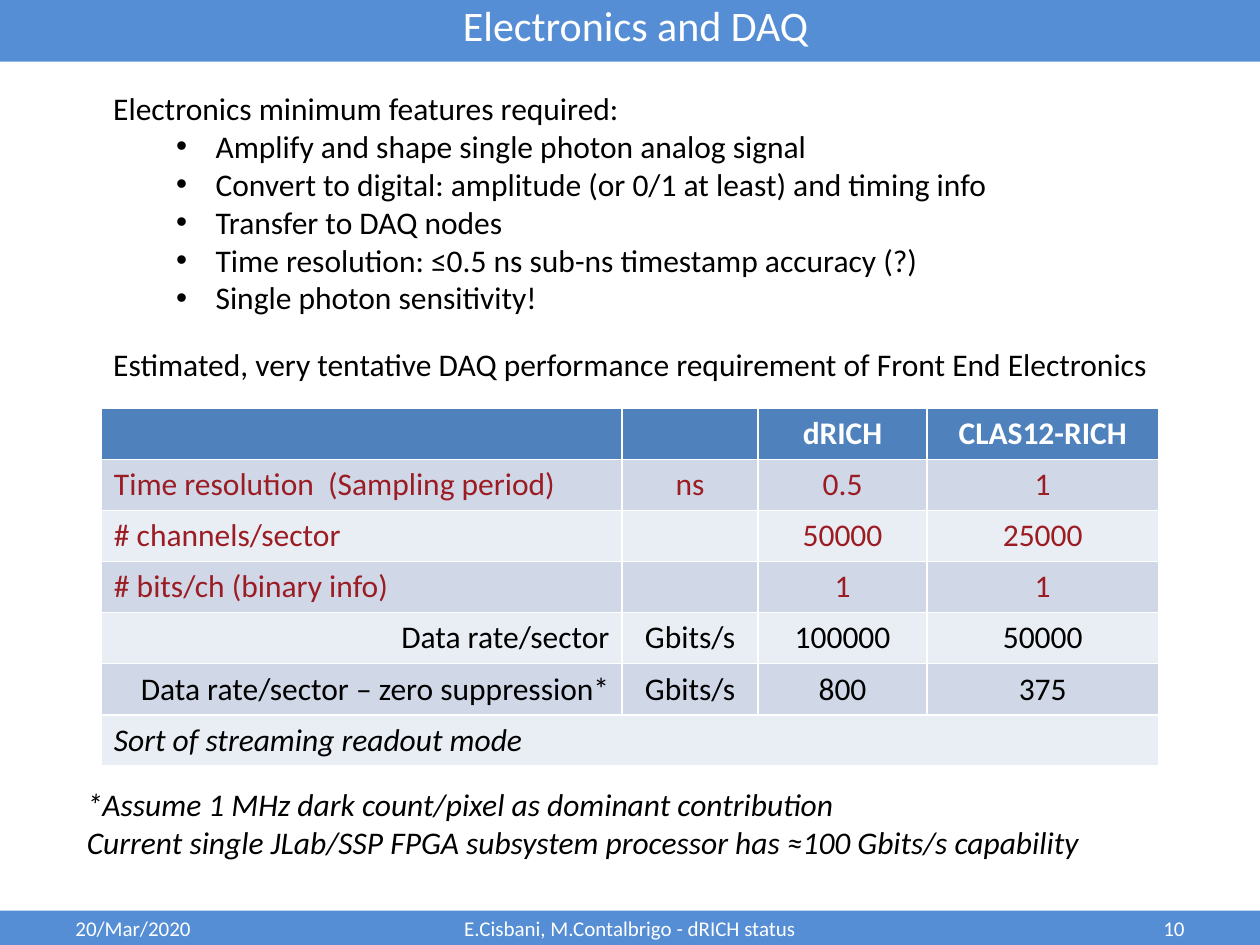
from dataclasses import dataclass

from lxml.etree import SubElement
from pptx import Presentation
from pptx.dml.color import RGBColor
from pptx.enum.shapes import MSO_SHAPE as Shape
from pptx.enum.text import MSO_ANCHOR as Anchor, PP_ALIGN as Align
from pptx.oxml.ns import qn
from pptx.util import Pt

FONT = "Calibri"
WHITE = RGBColor(0xFF, 0xFF, 0xFF)
BLACK = RGBColor(0x00, 0x00, 0x00)
RED = RGBColor(0x9B, 0x1C, 0x23)
BAR_BLUE = RGBColor(0x55, 0x8E, 0xD5)
HEADER_BLUE = RGBColor(0x4F, 0x81, 0xBD)
DARK_BAND = RGBColor(0xD0, 0xD8, 0xE8)
LIGHT_BAND = RGBColor(0xE9, 0xED, 0xF4)

PAGE_WIDTH, PAGE_HEIGHT = 720, 540
FOOTER_TOP, FOOTER_HEIGHT = 520.4, 19.8
COLUMN_WIDTHS = (297.6, 77.8, 96.4, 132.4)
ROW_HEIGHT = 29.2


@dataclass(frozen=True)
class Style:
    size: float = 18
    color: RGBColor = BLACK
    bold: bool = False
    italic: bool = False
    align: Align = Align.LEFT


@dataclass(frozen=True)
class TextBox:
    left: float
    top: float
    width: float
    height: float
    lines: tuple[str, ...]
    style: Style = Style()
    wrap: bool = True
    anchor: Anchor = Anchor.TOP
    bulleted: bool = False


@dataclass(frozen=True)
class Row:
    values: tuple[str, ...]
    color: RGBColor = BLACK
    label_align: Align = Align.LEFT
    bold: bool = False
    italic: bool = False


FOOTER = Style(size=12, color=WHITE)
FOOTER_CENTER = Style(size=12, color=WHITE, align=Align.CENTER)
FOOTER_RIGHT = Style(size=12, color=WHITE, align=Align.RIGHT)

BODY_BOXES = (
    TextBox(57.6, 47.5, 610.6, 138.2, (
        "Electronics minimum features required:",
        "Amplify and shape single photon analog signal",
        "Convert to digital: amplitude (or 0/1 at least) and timing info",
        "Transfer to DAQ nodes",
        "Time resolution: ≤0.5 ns sub-ns timestamp accuracy (?)",
        "Single photon sensitivity!",
    ), bulleted=True),
    TextBox(57.6, 193.7, 612.7, 28.8, (
        "Estimated, very tentative DAQ performance requirement of Front End Electronics",
    ), wrap=False),
    TextBox(42.5, 445, 591.8, 51.1, (
        "*Assume 1 MHz dark count/pixel as dominant contribution",
        "Current single JLab/SSP FPGA subsystem processor has ≈100 Gbits/s capability",
    ), Style(italic=True), wrap=False),
)

BAR_BOXES = (
    TextBox(255.6, -3.6, 215.3, 36, ("Electronics and DAQ",),
            Style(size=24, color=WHITE, align=Align.CENTER), wrap=False),
    TextBox(36, FOOTER_TOP, 168, FOOTER_HEIGHT, ("20/Mar/2020",),
            FOOTER, anchor=Anchor.MIDDLE),
    TextBox(246, FOOTER_TOP, 228, FOOTER_HEIGHT, ("E.Cisbani, M.Contalbrigo - dRICH status",),
            FOOTER_CENTER, anchor=Anchor.MIDDLE),
    TextBox(516, FOOTER_TOP, 168, FOOTER_HEIGHT, ("10",),
            FOOTER_RIGHT, anchor=Anchor.MIDDLE),
)

ROWS = (
    Row(("", "", "dRICH", "CLAS12-RICH"), WHITE, bold=True),
    Row(("Time resolution  (Sampling period)", "ns", "0.5", "1"), RED),
    Row(("# channels/sector", "", "50000", "25000"), RED),
    Row(("# bits/ch (binary info)", "", "1", "1"), RED),
    Row(("Data rate/sector", "Gbits/s", "100000", "50000"), label_align=Align.RIGHT),
    Row(("Data rate/sector – zero suppression*", "Gbits/s", "800", "375"),
        label_align=Align.RIGHT),
    Row(("Sort of streaming readout mode", "", "", ""), italic=True),
)


def format_paragraph(paragraph, style: Style) -> None:
    paragraph.alignment = style.align
    for span in paragraph.runs:
        span.font.name = FONT
        span.font.size = Pt(style.size)
        span.font.bold = style.bold
        span.font.italic = style.italic
        span.font.color.rgb = style.color


def add_bullet(paragraph) -> None:
    paragraph.level = 1
    properties = paragraph._p.get_or_add_pPr()
    properties.set("marL", str(Pt(58.5)))
    properties.set("indent", str(Pt(-22.5)))
    SubElement(properties, qn("a:buFont"), typeface="Arial")
    SubElement(properties, qn("a:buChar"), char="•")


def draw_text(page, item: TextBox) -> None:
    box = page.shapes.add_textbox(
        Pt(item.left), Pt(item.top), Pt(item.width), Pt(item.height))
    frame = box.text_frame
    frame.text = "\n".join(item.lines)
    frame.word_wrap = item.wrap
    frame.vertical_anchor = item.anchor
    for index, paragraph in enumerate(frame.paragraphs):
        if item.bulleted and index > 0:
            add_bullet(paragraph)
        format_paragraph(paragraph, item.style)


def draw_bar(page, top: float, height: float) -> None:
    bar = page.shapes.add_shape(
        Shape.RECTANGLE, Pt(0), Pt(top), Pt(PAGE_WIDTH), Pt(height))
    bar.shadow.inherit = False
    bar.fill.solid()
    bar.fill.fore_color.rgb = BAR_BLUE
    bar.line.fill.background()


def draw_table(page, rows: tuple[Row, ...]) -> None:
    table = page.shapes.add_table(
        len(rows), len(COLUMN_WIDTHS), Pt(57.9), Pt(233.3),
        Pt(sum(COLUMN_WIDTHS)), Pt(ROW_HEIGHT * len(rows))).table
    for column, width in zip(table.columns, COLUMN_WIDTHS):
        column.width = Pt(width)
    for row_index, row in enumerate(rows):
        table.rows[row_index].height = Pt(ROW_HEIGHT)
        band = DARK_BAND if row_index % 2 else LIGHT_BAND
        for column_index, value in enumerate(row.values):
            cell = table.cell(row_index, column_index)
            cell.text_frame.text = value
            cell.fill.solid()
            cell.fill.fore_color.rgb = band if row_index else HEADER_BLUE
            align = Align.CENTER if column_index else row.label_align
            style = Style(18, row.color, row.bold, row.italic, align)
            format_paragraph(cell.text_frame.paragraphs[0], style)
    last = len(rows) - 1
    table.cell(last, 0).merge(table.cell(last, len(COLUMN_WIDTHS) - 1))


def main() -> None:
    deck = Presentation()
    deck.slide_width, deck.slide_height = Pt(PAGE_WIDTH), Pt(PAGE_HEIGHT)
    page = deck.slides.add_slide(deck.slide_layouts[6])
    draw_table(page, ROWS)
    for item in BODY_BOXES:
        draw_text(page, item)
    draw_bar(page, 0, 35.2)
    draw_bar(page, FOOTER_TOP, FOOTER_HEIGHT)
    for item in BAR_BOXES:
        draw_text(page, item)
    deck.save("out.pptx")


if __name__ == "__main__":
    main()
